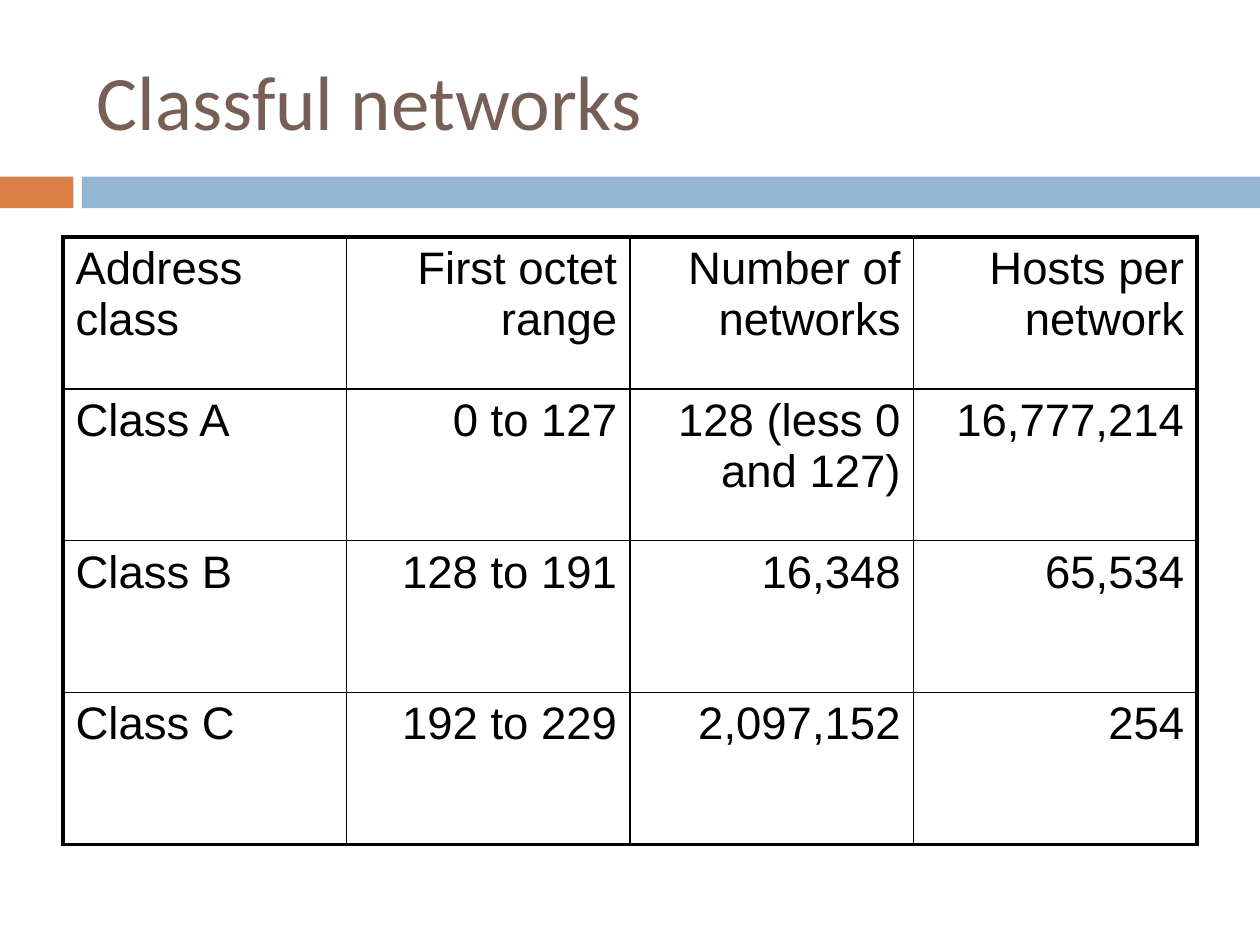
from lxml import etree
from pptx import Presentation
from pptx.dml.color import RGBColor
from pptx.enum.shapes import MSO_SHAPE
from pptx.enum.text import MSO_ANCHOR, PP_ALIGN
from pptx.oxml.ns import qn
from pptx.util import Cm, Pt

RECTANGLE = MSO_SHAPE.RECTANGLE
MIDDLE = MSO_ANCHOR.MIDDLE
LEFT, RIGHT = PP_ALIGN.LEFT, PP_ALIGN.RIGHT
TITLE_ONLY = 5

ORANGE, BLUE, BROWN, BLACK = "DD8047", "94B6D2", "775F55", "000000"
TITLE_FORMAT = {"name": "Calibri", "size": Pt(44), "bold": False}
CELL_FORMAT = {"name": "Arial", "size": Pt(26), "bold": False}
OUTER_LINE, INNER_LINE = Pt(2.25), Pt(1)

ADDRESS_CLASSES = [
    ["Address class", "First octet range", "Number of networks", "Hosts per network"],
    ["Class A", "0 to 127", "128 (less 0 and 127)", "16,777,214"],
    ["Class B", "128 to 191", "16,348", "65,534"],
    ["Class C", "192 to 229", "2,097,152", "254"],
]


def rgb(hex_color):
    return RGBColor.from_string(hex_color)


def format_text(paragraph, font_format, color, alignment):
    paragraph.alignment = alignment
    font = paragraph.runs[0].font
    for attribute, value in font_format.items():
        setattr(font, attribute, value)
    font.color.rgb = rgb(color)


def add_title(slide, text, left, top, width, height):
    title = slide.shapes.title
    title.left, title.top, title.width, title.height = left, top, width, height
    title.text_frame.text = text
    title.text_frame.vertical_anchor = MIDDLE
    format_text(title.text_frame.paragraphs[0], TITLE_FORMAT, BROWN, LEFT)


def add_title_band(slide, left, top, width, height):
    """A short accent block, a gap, then a bar over the remaining width."""
    accent_width, bar_offset = Cm(1.48), Cm(1.65)
    parts = [
        (left, accent_width, ORANGE),
        (left + bar_offset, width - bar_offset, BLUE),
    ]
    for part_left, part_width, color in parts:
        band = slide.shapes.add_shape(RECTANGLE, part_left, top, part_width, height)
        band.shadow.inherit = False
        band.fill.solid()
        band.fill.fore_color.rgb = rgb(color)
        band.line.fill.background()


def set_borders(cell, widths):
    properties = cell._tc.get_or_add_tcPr()
    for side, width in widths.items():
        line = etree.SubElement(properties, qn(f"a:ln{side}"), w=str(width))
        fill = etree.SubElement(line, qn("a:solidFill"))
        etree.SubElement(fill, qn("a:srgbClr"), val=BLACK)


def add_class_table(slide, records, left, top, width, height):
    row_count, column_count = len(records), len(records[0])
    table = slide.shapes.add_table(
        row_count, column_count, left, top, width, height
    ).table
    table.first_row = table.horz_banding = False

    for r, record in enumerate(records):
        for c, text in enumerate(record):
            cell = table.cell(r, c)
            cell.text = text
            alignment = RIGHT if c else LEFT
            format_text(cell.text_frame.paragraphs[0], CELL_FORMAT, BLACK, alignment)
            # Heavy frame around the table, thin lines inside
            on_frame = {
                "L": c == 0,
                "R": c == column_count - 1,
                "T": r == 0,
                "B": r == row_count - 1,
            }
            set_borders(cell, {side: OUTER_LINE if outer else INNER_LINE
                               for side, outer in on_frame.items()})
            cell.fill.background()


def main():
    presentation = Presentation()
    presentation.slide_width, presentation.slide_height = Cm(25.4), Cm(19.05)
    slide = presentation.slides.add_slide(presentation.slide_layouts[TITLE_ONLY])

    add_title_band(slide, 0, Cm(3.56), presentation.slide_width, Cm(0.64))
    add_title(slide, "Classful networks", Cm(1.7), Cm(0.64), Cm(22.65), Cm(2.74))
    add_class_table(slide, ADDRESS_CLASSES, Cm(1.27), Cm(4.78), Cm(22.86), Cm(12.24))

    presentation.save("out.pptx")


if __name__ == "__main__":
    main()
